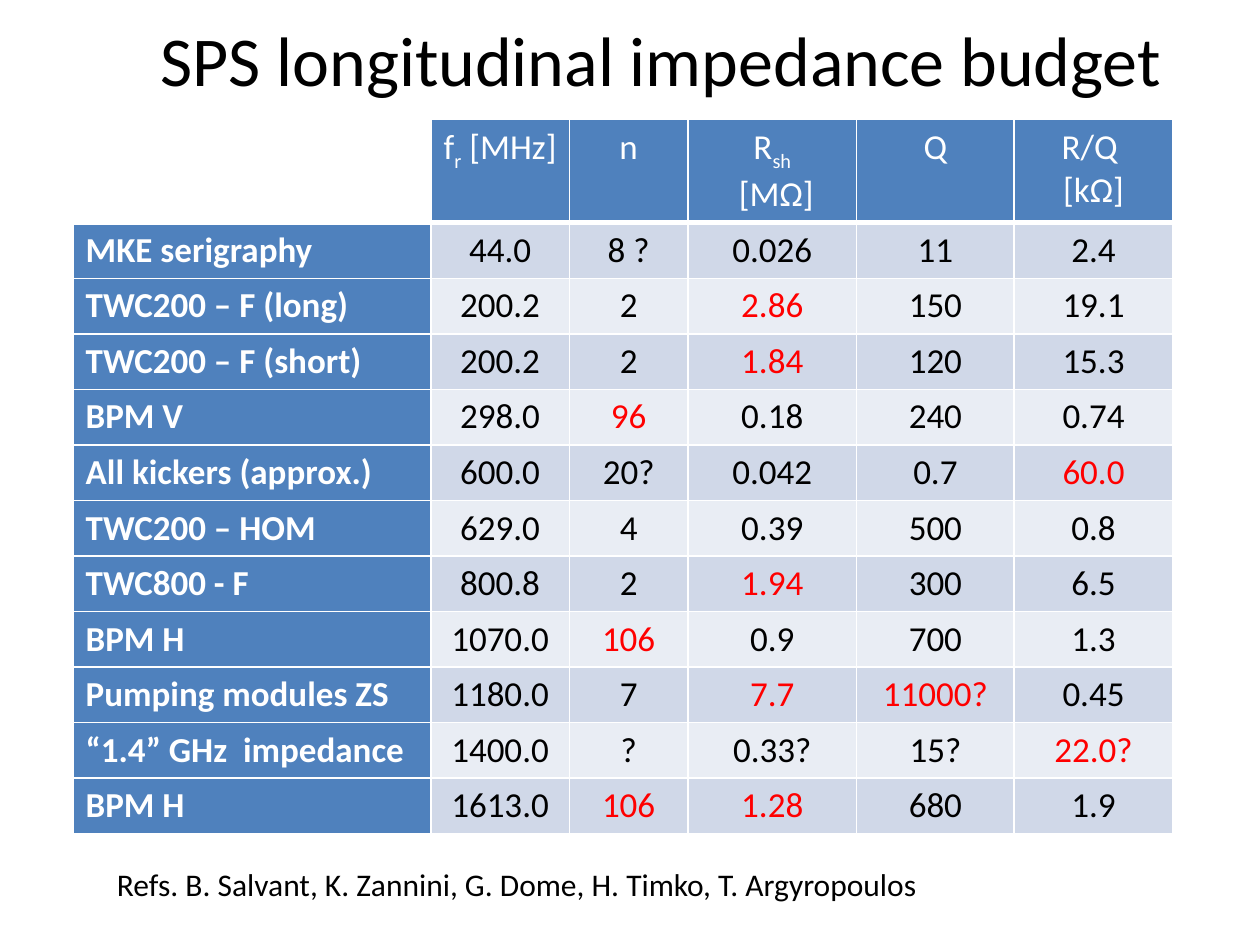
from dataclasses import dataclass

from lxml import etree
from pptx import Presentation
from pptx import util as u
from pptx.dml.color import RGBColor
from pptx.enum import text
from pptx.oxml.ns import qn


@dataclass(frozen=True)
class Theme:
    font: str = "Calibri"
    title_size: int = 40
    table_size: int = 20
    refs_size: int = 18
    ink: str = "000000"
    paper: str = "FFFFFF"
    accent: str = "4F81BD"
    alert: str = "FF0000"
    bands: tuple = ("D0D8E8", "E9EDF4")
    border: int = 1
    header_border: int = 3


GRID_COLS, GRID_ROWS = 100, 75

# Text between underscores is subscript; a leading "*" marks a critical value.
HEADER = ["", "f_r_ [MHz]", "n", "R_sh_\n [MΩ]", "Q", "R/Q \n[kΩ]"]
SOURCES = [
    ["MKE serigraphy", "44.0", "8 ?", "0.026", "11", "2.4"],
    ["TWC200 – F (long)", "200.2", "2", "*2.86", "150", "19.1"],
    ["TWC200 – F (short)", "200.2", "2", "*1.84", "120", "15.3"],
    ["BPM V", "298.0", "*96", "0.18", "240", "0.74"],
    ["All kickers (approx.)", "600.0", "20?", "0.042", "0.7", "*60.0"],
    ["TWC200 – HOM", "629.0", "4", "0.39", "500", "0.8"],
    ["TWC800 - F", "800.8", "2", "*1.94", "300", "6.5"],
    ["BPM H", "1070.0", "*106", "0.9", "700", "1.3"],
    ["Pumping modules ZS", "1180.0", "7", "*7.7", "*11000?", "0.45"],
    ["“1.4” GHz  impedance", "1400.0", "?", "0.33?", "15?", "*22.0?"],
    ["BPM H", "1613.0", "*106", "*1.28", "680", "1.9"],
]


class SlideBuilder:
    def __init__(self, prs, theme):
        self.theme = theme
        self.col = prs.slide_width / GRID_COLS
        self.row = prs.slide_height / GRID_ROWS
        self.s = prs.slides.add_slide(prs.slide_layouts[5])

    def box(self, x, y, w, h):
        """Turn grid columns and rows into left, top, width, height."""
        return (int(x * self.col), int(y * self.row),
                int(w * self.col), int(h * self.row))

    def style(self, r, size, color, bold=False):
        r.font.name = self.theme.font
        r.font.size = u.Pt(size)
        r.font.bold = bold
        r.font.color.rgb = RGBColor.from_string(color)

    def title(self, words, *place, indent=0):
        sp = self.s.shapes.title
        sp.left, sp.top, sp.width, sp.height = self.box(*place)
        tf = sp.text_frame
        tf.text = words
        tf.auto_size = text.MSO_AUTO_SIZE.NONE
        tf.vertical_anchor = text.MSO_ANCHOR.TOP
        tf.margin_left = int(indent * self.col)
        p = tf.paragraphs[0]
        p.alignment = text.PP_ALIGN.CENTER
        self.style(p.runs[0], self.theme.title_size, self.theme.ink)

    def note(self, words, *place):
        tf = self.s.shapes.add_textbox(*self.box(*place)).text_frame
        tf.word_wrap = True
        tf.text = words
        self.style(tf.paragraphs[0].runs[0], self.theme.refs_size, self.theme.ink)

    def table(self, rows, x, y, widths, row_height):
        place = self.box(x, y, sum(widths), row_height * len(rows))
        tbl = self.s.shapes.add_table(len(rows), len(widths), *place).table
        tbl.first_row = tbl.horz_banding = False
        for column, width in zip(tbl.columns, widths):
            column.width = int(width * self.col)
        for i, values in enumerate(rows):
            tbl.rows[i].height = int(row_height * self.row)
            for j, value in enumerate(values):
                self.cell(tbl.cell(i, j), value, i, j)

    def cell(self, cell, value, i, j):
        t = self.theme
        is_header, is_label = i == 0, j == 0
        if is_header and is_label:
            fill, color = t.paper, t.ink
        elif is_header or is_label:
            fill, color = t.accent, t.paper
        else:
            fill = t.bands[(i - 1) % 2]
            color = t.alert if value.startswith("*") else t.ink
        self.borders(cell, t.header_border if is_header else t.border)
        cell.fill.solid()
        cell.fill.fore_color.rgb = RGBColor.from_string(fill)

        tf = cell.text_frame
        tf.text = value.lstrip("*")
        for p in tf.paragraphs:
            p.font.size = u.Pt(t.table_size)
            p.alignment = (text.PP_ALIGN.LEFT if is_label
                           else text.PP_ALIGN.CENTER)
            parts = p.text.split("_")
            p.clear()
            for k, part in enumerate(parts):
                if part:
                    r = p.add_run()
                    r.text = part
                    self.style(r, t.table_size, color, bold=is_label)
                    if k % 2:
                        r.font._element.set("baseline", "-25000")

    def borders(self, cell, bottom):
        tc_pr = cell._tc.get_or_add_tcPr()
        for side in "LRTB":
            width = bottom if side == "B" else self.theme.border
            ln = etree.SubElement(tc_pr, qn(f"a:ln{side}"), w=str(u.Pt(width)))
            fill = etree.SubElement(ln, qn("a:solidFill"))
            etree.SubElement(fill, qn("a:srgbClr"), val=self.theme.paper)


def main():
    prs = Presentation()
    prs.slide_width, prs.slide_height = u.Inches(10), u.Inches(7.5)
    slide = SlideBuilder(prs, Theme())
    slide.title("SPS longitudinal impedance budget", 5.8, 0.8, 88.3, 12.5, indent=6)
    slide.table([HEADER, *SOURCES], 5.8, 9.5,
                widths=[28.4, 11, 9.4, 13.4, 12.5, 12.6], row_height=4.1)
    slide.note("Refs. B. Salvant, K. Zannini, G. Dome, H. Timko, T. Argyropoulos",
               8.3, 68.2, 70.1, 4)
    prs.save("out.pptx")


if __name__ == "__main__":
    main()
